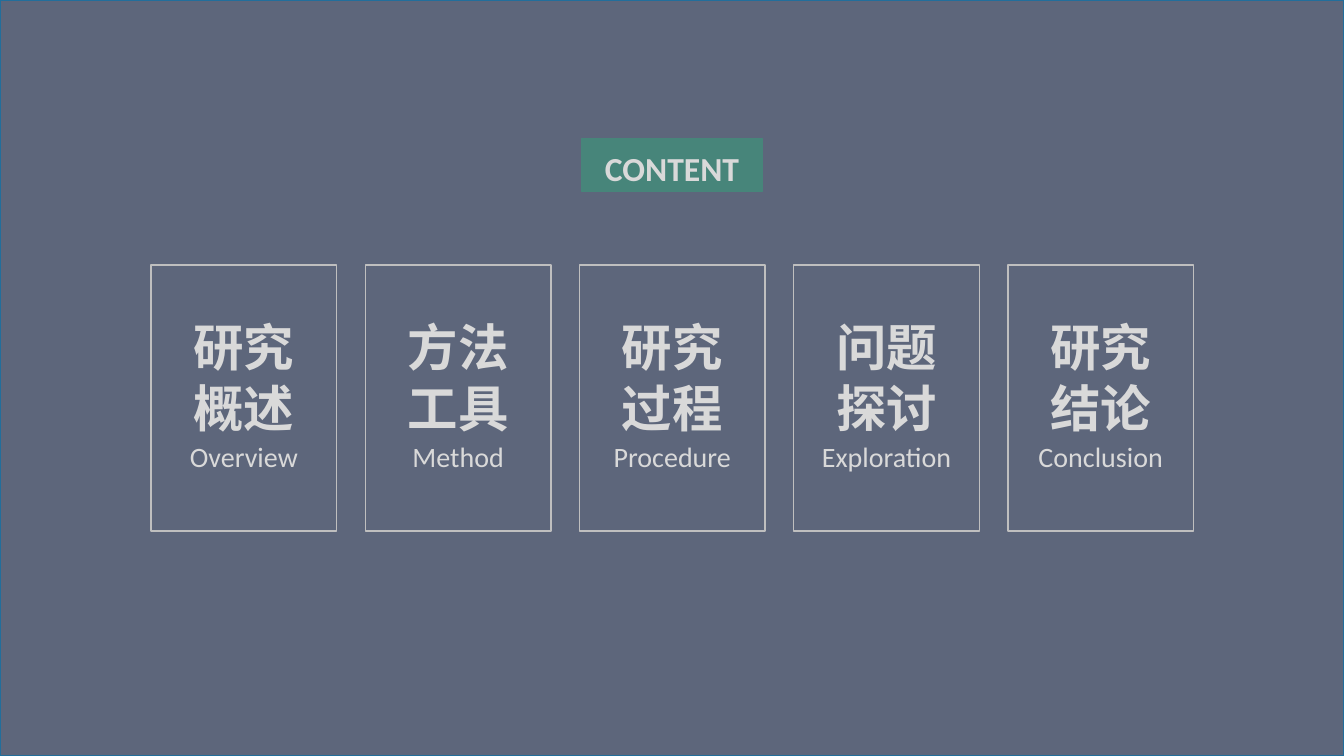
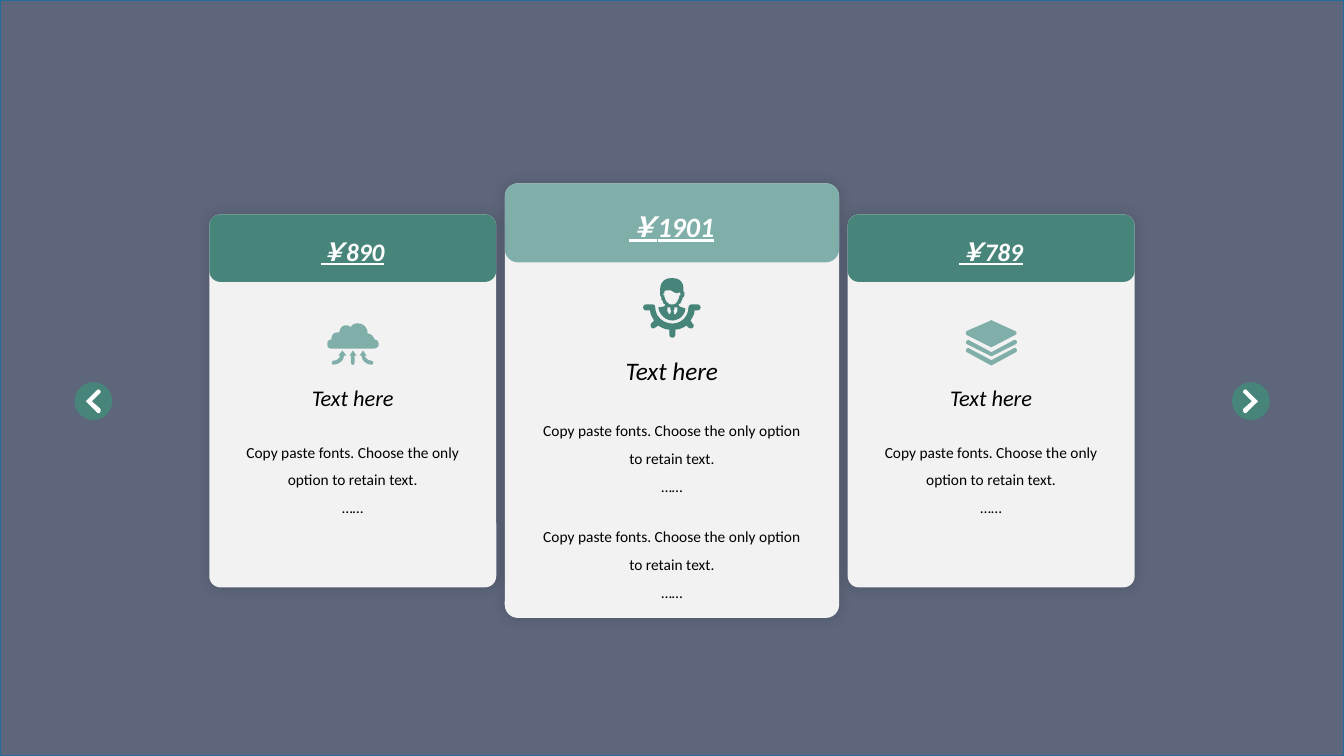
from lxml.etree import SubElement
from pptx import Presentation
from pptx.dml.color import RGBColor
from pptx.enum.shapes import MSO_SHAPE as Preset
from pptx.enum.text import MSO_ANCHOR as Anchor, PP_ALIGN as Align
from pptx.oxml.ns import qn
from pptx.util import Pt

SLIDE_W, SLIDE_H = 960, 540
COLORS = {
    "navy": "192643", "edge": "226E9B", "green": "47857A", "mint": "80AFAA",
    "panel": "F2F2F2", "frame": "BFBFBF", "pale": "D9D9D9",
    "white": "FFFFFF", "black": "000000",
}
LATIN, CHINESE = "Calibri", "Noto Sans CJK SC"

SECTIONS = [
    ("研究概述", "Overview"),
    ("方法工具", "Method"),
    ("研究过程", "Procedure"),
    ("问题探讨", "Exploration"),
    ("研究结论", "Conclusion"),
]
BLURB = ["Copy paste fonts. Choose the only option to retain text.", "……"]

# Each icon is a list of closed outlines: M (move), L (line) and C (cubic curve),
# in units of ICON_UNIT points.
ICON_UNIT = 0.72
CHEVRON = [
    "M 14 4 L 6 12 L 14 19 C 15 20 15 22 14 23 C 13 24 12 24 11 23 "
    "L 0 12 L 11 1 C 12 0 13 0 14 1 C 15 2 15 3 14 4",
]
CLOUD = [
    "M 30 0 C 36 0 40 4 40 10 C 43 10 46 13 47 16 C 49 16 51 18 51 21 "
    "C 51 23 49 25 46 25 L 4 25 C 1 25 0 23 0 21 C 0 18 1 16 4 16 "
    "C 4 12 6 9 10 9 L 12 9 C 12 5 15 2 18 2 C 20 2 22 2 23 4 C 25 1 27 0 30 0",
    "M 25.5 27 L 29 32 L 27 32 L 27 39 C 27 42 23.5 42 23.5 39 L 23.5 32 L 22 32",
    "M 35.5 27 L 39 32 L 37 32 C 38 35 41 37 44 37 C 46 37 46 41 44 41 "
    "C 39 41 34 37 34 32 L 32 32",
    "M 15 27 L 19 32 L 16.5 32 C 16.5 37 11 41 6 41 C 4 41 4 37 6 37 "
    "C 9 37 12 35 13 32 L 11 32",
]
LAYERS = [
    "M 24 1 C 25 0 26 0 27 1 L 49 11 C 51 12 51 14 49 15 L 26 27 L 25 27 "
    "L 1 15 C 0 14 0 12 1 11",
    "M 2 20 L 3 20 L 25.5 32 L 48 20 C 50 19 52 22 50 24 L 26 36 L 25 36 "
    "L 1 24 C 0 23 0 21 2 20",
    "M 2 28 L 3 28 L 25.5 40 L 48 28 C 50 27 52 30 50 32 L 26 45 L 25 45 "
    "L 1 32 C 0 31 0 29 2 28",
]
VEST = [
    "M 33 29 L 31 29 L 31 31 L 30 32 L 31 36 L 32 36 L 34 33 L 34 29",
    "M 25 29 L 24 29 L 24 33 L 26 36 L 27 35 L 28 32 L 27 31 L 27 29",
]
WHEEL = (
    "M 3 26 L 9 26 C 11 26 12 27 12 29 C 12 38 20 45 29 45 C 38 45 45 38 45 29 "
    "C 45 27 47 26 48 26 L 54 26 C 58 26 58 32 54 32 L 51 32 C 51 36 49 39 47 42 "
    "L 49 45 C 52 47 49 52 45 49 L 43 47 C 40 49 36 51 32 51 L 32 56 "
    "C 32 60 26 60 26 56 L 26 51 C 22 51 18 49 15 47 L 12 49 C 9 52 6 47 8 45 "
    "L 11 42 C 9 39 7 36 7 32 L 3 32 C -1 32 -1 26 3 26"
)
FACE = (
    "M 26 12 C 24 12 22 12 21 13 L 21 15 L 20 15 L 20 17 L 21 17 "
    "C 21 19 22 21 23 23 C 25 25 26 26 27 26 L 30 26 C 31 26 33 25 34 23 "
    "C 35 21 36 19 36 17 L 37 17 L 37 15 L 36 14 C 33 16 31 14 29 13 "
    "C 28 12 27 12 26 12"
)
HEAD_AND_SHOULDERS = (
    "M 27 0 L 30 0 C 36 0 40 4 40 10 L 40 13 L 41 14 L 41 17 L 40 19 "
    "C 39 19 39 20 39 21 C 38 22 38 23 37 25 L 35 26 L 36 28 L 42 30 "
    "C 42 36 36 42 29 42 C 22 42 16 36 15 29 L 21 28 L 22 26 L 20 25 "
    "C 20 23 19 22 18 21 L 18 19 L 17 17 L 17 10 C 17 4 22 0 27 0"
)
HELMSMAN = [*VEST, WHEEL, FACE, HEAD_AND_SHOULDERS]


def rgb(color):
    return RGBColor.from_string(COLORS[color])


def write_text(shape, paragraphs, *, size, color, font=LATIN, bold=False, italic=False,
               underline=False, anchor=Anchor.TOP, spacing=None):
    frame = shape.text_frame
    frame.word_wrap = True
    frame.vertical_anchor = anchor
    for number, words in enumerate(paragraphs):
        paragraph = frame.add_paragraph() if number else frame.paragraphs[0]
        paragraph.alignment = Align.CENTER
        if spacing:
            paragraph.line_spacing = spacing
        run = paragraph.add_run()
        run.text = words
        run.font.size, run.font.name = Pt(size), font
        run.font.bold, run.font.italic, run.font.underline = bold, italic, underline
        run.font.color.rgb = rgb(color)
    for run_format in shape.element.iter(qn("a:rPr")):
        SubElement(run_format, qn("a:ea"), typeface=font)


def add_text(slide, left, top, width, height, paragraphs, **style):
    box = slide.shapes.add_textbox(Pt(left), Pt(top), Pt(width), Pt(height))
    write_text(box, paragraphs, **style)


def paint(shape, fill=None, line=None):
    shape.shadow.inherit = False
    if fill:
        shape.fill.solid()
        shape.fill.fore_color.rgb = rgb(fill)
    else:
        shape.fill.background()
    if line:
        shape.line.color.rgb = rgb(line)
        shape.line.width = Pt(1)
    else:
        shape.line.fill.background()


def add_preset(slide, preset, left, top, width, height, fill=None, line=None):
    shape = slide.shapes.add_shape(preset, Pt(left), Pt(top), Pt(width), Pt(height))
    paint(shape, fill, line)
    return shape


def set_opacity(color_element, percent):
    SubElement(color_element, qn("a:alpha"), val=str(percent * 1000))


def add_glow_shadow(shape, blur, percent):
    """Soft shadow on all sides."""
    effects = shape.element.spPr.find(qn("a:effectLst"))
    shadow = SubElement(effects, qn("a:outerShdw"), blurRad=str(Pt(blur)), dist="0",
                        dir="0", algn="ctr", rotWithShape="0")
    set_opacity(SubElement(shadow, qn("a:srgbClr"), val=COLORS["black"]), percent)


def trace(outline, steps=6):
    """Turn an outline into points, with curves cut into short lines."""
    points = []
    tokens = iter(outline.split())
    for command in tokens:
        count = 3 if command == "C" else 1
        given = [(float(next(tokens)), float(next(tokens))) for _ in range(count)]
        if command != "C":
            points += given
            continue
        controls = [points[-1], *given]
        for step in range(1, steps + 1):
            t = step / steps
            weights = ((1 - t) ** 3, 3 * t * (1 - t) ** 2, 3 * t * t * (1 - t), t ** 3)
            points.append(tuple(sum(w * control[axis] for w, control in zip(weights, controls))
                                for axis in (0, 1)))
    return points


def add_icon(slide, outlines, left, top, fill, mirror_width=None):
    """Draw the outlines as one shape; mirror_width flips it within that many units."""
    builder = None
    for outline in outlines:
        spots = [(Pt(left + ICON_UNIT * (mirror_width - x if mirror_width else x)),
                  Pt(top + ICON_UNIT * y)) for x, y in trace(outline)]
        if builder is None:
            builder = slide.shapes.build_freeform(*spots[0], scale=1.0)
        else:
            builder.move_to(*spots[0])
        builder.add_line_segments(spots[1:], close=True)
    paint(builder.convert_to_shape(), fill)


def add_page(deck):
    """Add a blank slide with the shared backdrop."""
    slide = deck.slides.add_slide(deck.slide_layouts[6])
    backdrop = add_preset(slide, Preset.RECTANGLE, 0, 0, SLIDE_W, SLIDE_H, "navy", "edge")
    set_opacity(backdrop.element.spPr.find(qn("a:solidFill")).find(qn("a:srgbClr")), 70)
    return slide


def add_section(slide, left, chinese, english):
    width, title_width = 132.5, 90
    add_preset(slide, Preset.RECTANGLE, left, 189.4, width, 190, line="frame")
    add_text(slide, left + (width - title_width) / 2, 222.5, title_width, 94.3, [chinese],
             size=36, color="pale", font=CHINESE, bold=True)
    add_text(slide, left, 310.3, width, 31.7, [english], size=20, color="pale")


def add_price_card(slide, left, top, width, height, *, price, band, band_height, price_size,
                   margin, title_top, title_height, title_size, blurb_tops):
    panel = add_preset(slide, Preset.ROUNDED_RECTANGLE, left, top, width, height, "panel")
    panel.adjustments[0] = 0.039
    add_glow_shadow(panel, 10, 15)
    header = add_preset(slide, Preset.ROUNDED_RECTANGLE, left, top, width, band_height, band)
    write_text(header, [price], size=price_size, color="white", bold=True, italic=True,
               underline=True, anchor=Anchor.MIDDLE, spacing=1.2)
    text_left, text_width = left + margin, width - 2 * margin
    add_text(slide, text_left, title_top, text_width, title_height, ["Text here"],
             size=title_size, color="black", italic=True, anchor=Anchor.MIDDLE)
    for blurb_top in blurb_tops:
        add_text(slide, text_left, blurb_top, text_width, 75.6, BLURB,
                 size=11, color="black", spacing=1.5)


def add_arrow_button(slide, left, mirror_width=None):
    add_preset(slide, Preset.FLOWCHART_CONNECTOR, left, 273, 27, 27, "green")
    add_icon(slide, CHEVRON, left + 8.1, 278, "white", mirror_width)


def build_contents(deck):
    slide = add_page(deck)
    label = add_preset(slide, Preset.RECTANGLE, 415.5, 99, 129, 37.8, "green", "green")
    label.text_frame.margin_top, label.text_frame.margin_bottom = Pt(4), Pt(0)
    write_text(label, ["CONTENT"], size=24, color="pale", bold=True, anchor=Anchor.MIDDLE)
    for number, (chinese, english) in enumerate(SECTIONS):
        add_section(slide, 108 + 153 * number, chinese, english)


def build_prices(deck):
    slide = add_page(deck)
    add_arrow_button(slide, 53.2)
    add_arrow_button(slide, 880, mirror_width=14.5)
    add_price_card(slide, 360.6, 131, 238.8, 310.4, price="￥1901", band="mint",
                   band_height=56.4, price_size=20, margin=18, title_top=248.4,
                   title_height=33, title_size=18, blurb_tops=(290.9, 366.5))
    add_icon(slide, HELMSMAN, 459.4, 198.7, "green")
    for left, price, icon, icon_top in ((149.5, "￥890", CLOUD, 231),
                                        (605.5, "￥789", LAYERS, 228.5)):
        add_price_card(slide, left, 153.2, 205, 266.4, price=price, band="green",
                       band_height=48.2, price_size=18, margin=15.2, title_top=269.5,
                       title_height=29, title_size=16, blurb_tops=(306,))
        add_icon(slide, icon, left + 84.3, icon_top, "mint")


def main():
    deck = Presentation()
    deck.slide_width, deck.slide_height = Pt(SLIDE_W), Pt(SLIDE_H)
    build_contents(deck)
    build_prices(deck)
    deck.save("out.pptx")


if __name__ == "__main__":
    main()
